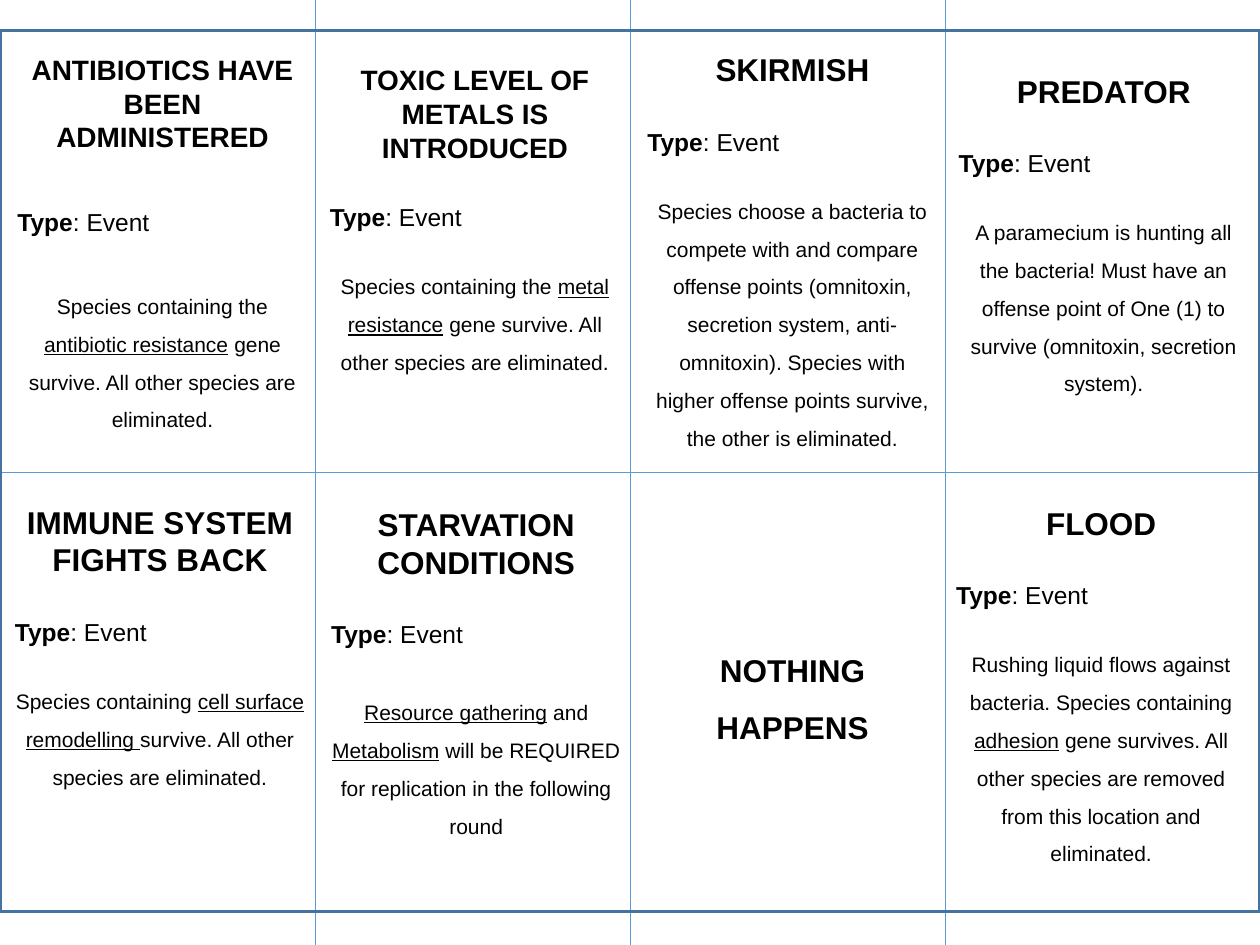
from dataclasses import dataclass

from lxml.etree import SubElement
from pptx import Presentation
from pptx.dml.color import RGBColor
from pptx.enum.shapes import MSO_CONNECTOR, MSO_SHAPE
from pptx.enum.text import MSO_AUTO_SIZE as AutoSize, PP_ALIGN as Align
from pptx.oxml.ns import qn
from pptx.util import Inches, Pt


@dataclass(frozen=True)
class Theme:
    font: str = "Arial"
    ink: RGBColor = RGBColor(0x00, 0x00, 0x00)
    grid: RGBColor = RGBColor(0x5B, 0x9B, 0xD5)
    border: RGBColor = RGBColor(0x43, 0x73, 0x9E)
    title: Pt = Pt(18)
    long_title: Pt = Pt(16)
    kind: Pt = Pt(14)
    body: Pt = Pt(12)
    line_spacing: float = 1.5
    title_gap: Pt = Pt(22)


@dataclass(frozen=True)
class Card:
    """One event card; underscores in the body enclose underlined words."""
    title: str
    body: str
    left: float  # offset of the text from the left of its cell, in inches
    top: float   # offset of the text from the top of its cell, in inches
    height: float
    title_size: Pt = Theme.title
    kind_spacing: float = 1.0
    body_gap: Pt = Pt(17)


THEME = Theme()
PAGE_WIDTH, PAGE_HEIGHT = 10, 7.5
COLUMNS, ROWS = 4, 2
CELL_WIDTH, CELL_HEIGHT = PAGE_WIDTH / COLUMNS, PAGE_HEIGHT / ROWS

CARDS = [
    Card("ANTIBIOTICS HAVE BEEN ADMINISTERED",
         "Species containing the _antibiotic resistance_ gene survive. "
         "All other species are eliminated.",
         0.04, 0.37, 3.13, THEME.long_title, THEME.line_spacing, Pt(25.6)),
    Card("TOXIC LEVEL OF METALS IS INTRODUCED",
         "Species containing the _metal resistance_ gene survive. "
         "All other species are eliminated.",
         0.02, 0.45, 2.59, THEME.long_title),
    Card("SKIRMISH",
         "Species choose a bacteria to compete with and compare offense points "
         "(omnitoxin, secretion system, anti-omnitoxin). Species with higher "
         "offense points survive, the other is eliminated.",
         0.04, 0.35, 3.3),
    Card("PREDATOR",
         "A paramecium is hunting all the bacteria! Must have an offense point "
         "of One (1) to survive (omnitoxin, secretion system).",
         0.01, 0.52, 2.69),
    Card("IMMUNE SYSTEM FIGHTS BACK",
         "Species containing _cell surface remodelling _survive. "
         "All other species are eliminated.",
         0.02, 0.19, 2.69),
    Card("STARVATION CONDITIONS",
         "_Resource gathering_ and _Metabolism_ will be REQUIRED for "
         "replication in the following round",
         0.03, 0.21, 2.76, body_gap=Pt(22)),
    Card("NOTHING HAPPENS", "", 0.04, 1.22, 1.01),
    Card("FLOOD",
         "Rushing liquid flows against bacteria. Species containing _adhesion_ "
         "gene survives. All other species are removed from this location and "
         "eliminated.",
         -0.01, 0.2, 3.3),
]


def style(para, size, align, spacing=1.0, before=Pt(0), bold=None):
    para.alignment = align
    para.line_spacing = spacing
    para.space_before = before
    para.font.name = THEME.font
    para.font.size = size
    para.font.color.rgb = THEME.ink
    para.font.bold = bold


def add_span(para, text, bold=None, underline=None):
    span = para.add_run()
    span.text = text
    span.font.bold = bold
    span.font.underline = underline


def add_card(page, card, left, top):
    box = page.shapes.add_textbox(Inches(left + card.left), Inches(top + card.top),
                                  Inches(CELL_WIDTH), Inches(card.height))
    frame = box.text_frame
    frame.word_wrap = True
    frame.auto_size = AutoSize.SHAPE_TO_FIT_TEXT

    title = frame.paragraphs[0]
    title_spacing = 1.0 if card.body else THEME.line_spacing
    style(title, card.title_size, Align.CENTER, title_spacing, bold=True)
    add_span(title, card.title)
    if not card.body:
        return

    kind = frame.add_paragraph()
    style(kind, THEME.kind, Align.LEFT, card.kind_spacing, THEME.title_gap)
    add_span(kind, "Type", bold=True)
    add_span(kind, ": Event")

    body = frame.add_paragraph()
    style(body, THEME.body, Align.CENTER, THEME.line_spacing, card.body_gap)
    for index, text in enumerate(card.body.split("_")):
        if text:
            add_span(body, text, underline=True if index % 2 else None)


def add_rule(page, x1, y1, x2, y2):
    rule = page.shapes.add_connector(MSO_CONNECTOR.STRAIGHT, Inches(x1), Inches(y1),
                                     Inches(x2), Inches(y2))
    rule.line.color.rgb = THEME.grid
    rule.line.width = Pt(0.5)
    SubElement(rule._element.spPr, qn("a:effectLst"))


def add_grid(page):
    for column in range(1, COLUMNS):
        add_rule(page, column * CELL_WIDTH, 0, column * CELL_WIDTH, PAGE_HEIGHT)
    for row in range(1, ROWS):
        add_rule(page, 0, row * CELL_HEIGHT, PAGE_WIDTH, row * CELL_HEIGHT)


def add_border(page, left, top, width, height):
    border = page.shapes.add_shape(MSO_SHAPE.FRAME, Inches(left), Inches(top),
                                   Inches(width), Inches(height))
    border.adjustments[0] = 0.001
    border.shadow.inherit = False
    border.fill.solid()
    border.fill.fore_color.rgb = THEME.grid
    border.line.color.rgb = THEME.border
    border.line.width = Pt(1)


def main():
    deck = Presentation()
    deck.slide_width, deck.slide_height = Inches(PAGE_WIDTH), Inches(PAGE_HEIGHT)
    page = deck.slides.add_slide(deck.slide_layouts[6])
    add_grid(page)
    for index, card in enumerate(CARDS):
        row, column = divmod(index, COLUMNS)
        add_card(page, card, column * CELL_WIDTH, row * CELL_HEIGHT)
    add_border(page, 0, 0.24, PAGE_WIDTH, 7)
    deck.save("out.pptx")


if __name__ == "__main__":
    main()
